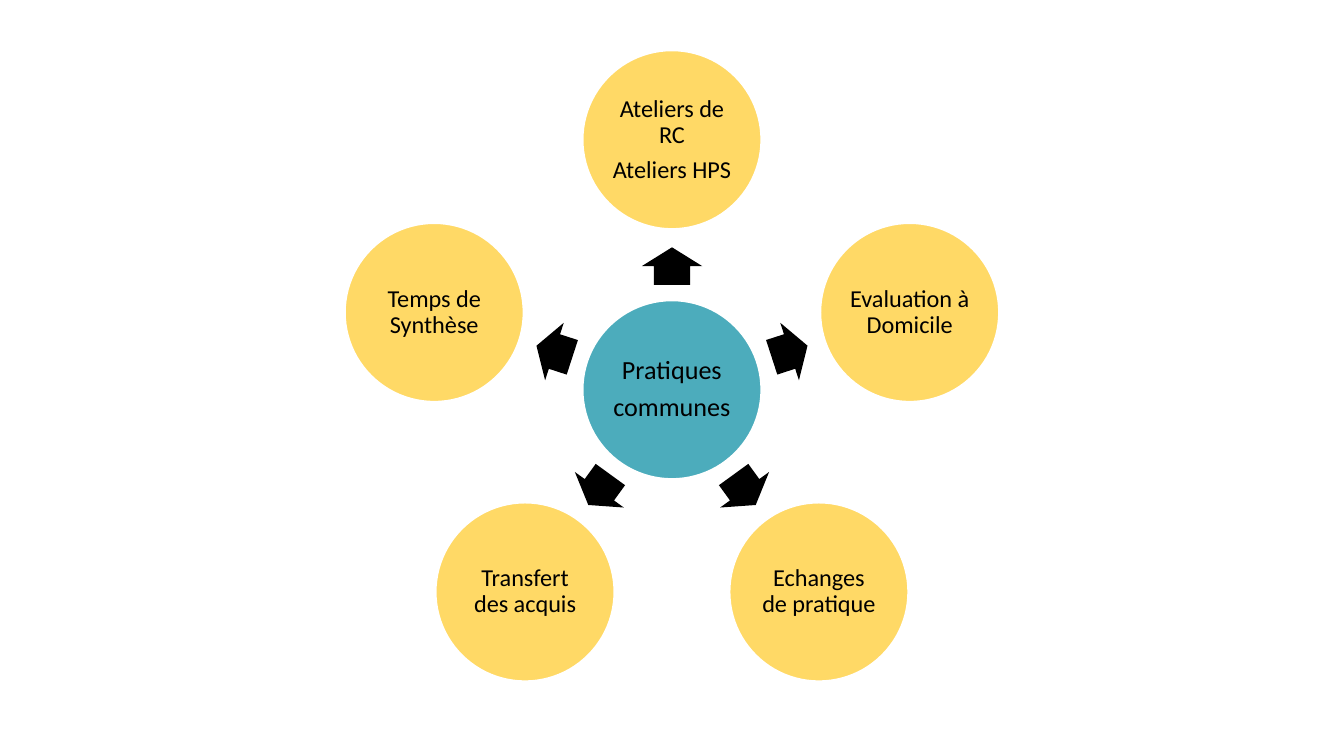
from math import cos, radians, sin

from pptx import Presentation
from pptx.dml.color import RGBColor
from pptx.enum.shapes import MSO_SHAPE
from pptx.enum.text import MSO_ANCHOR, PP_ALIGN
from pptx.util import Inches, Pt

ELLIPSE, ARROW = MSO_SHAPE.OVAL, MSO_SHAPE.RIGHT_ARROW
MIDDLE, CENTER = MSO_ANCHOR.MIDDLE, PP_ALIGN.CENTER

# Content: the hub, then the practices clockwise from the top
HUB = ["Pratiques", "communes"]
PRACTICES = [
    ["Ateliers de RC", "Ateliers HPS"],
    ["Evaluation à Domicile"],
    ["Echanges de pratique"],
    ["Transfert des acquis"],
    ["Temps de Synthèse"],
]

# Layout in inches (a 16:9 slide), colours and text sizes
SLIDE_WIDTH = 10
SLIDE_HEIGHT = SLIDE_WIDTH * 9 / 16
CENTER_X, CENTER_Y = SLIDE_WIDTH / 2, 2.9
DIAMETER = 1.33
RING_RADIUS, ARROW_RADIUS = 1.86, 0.92
ARROW_LENGTH, ARROW_WIDTH = 0.28, 0.45
TEAL, YELLOW, BLACK, WHITE = "4CACBC", "FFD966", "000000", "FFFFFF"
HUB_SIZE, PRACTICE_SIZE = 14, 13


def color(hex_value):
    return RGBColor.from_string(hex_value)


def polar(radius, angle):
    """Point at a clockwise angle around the hub."""
    return (CENTER_X + radius * cos(radians(angle)),
            CENTER_Y + radius * sin(radians(angle)))


def add_centered(slide, kind, center, width, height, fill):
    x, y = center
    shape = slide.shapes.add_shape(kind, Inches(x - width / 2), Inches(y - height / 2),
                                   Inches(width), Inches(height))
    shape.shadow.inherit = False
    shape.fill.solid()
    shape.fill.fore_color.rgb = color(fill)
    return shape


def add_circle(slide, center, lines, fill, size):
    shape = add_centered(slide, ELLIPSE, center, DIAMETER, DIAMETER, fill)
    shape.line.color.rgb = color(WHITE)
    shape.line.width = Pt(1)

    frame = shape.text_frame
    margins = {f"margin_{side}": Inches(0.02) for side in ("left", "top", "right", "bottom")}
    for name, value in {**margins, "word_wrap": True, "vertical_anchor": MIDDLE}.items():
        setattr(frame, name, value)

    paragraph_format = {"alignment": CENTER, "line_spacing": 0.9, "space_after": Pt(0.35 * size)}
    for index, line in enumerate(lines):
        paragraph = frame.add_paragraph() if index else frame.paragraphs[0]
        paragraph.text = line
        for name, value in paragraph_format.items():
            setattr(paragraph, name, value)
        for name, value in {"name": "Calibri", "size": Pt(size)}.items():
            setattr(paragraph.font, name, value)
        paragraph.font.color.rgb = color(BLACK)


def add_arrow(slide, angle):
    arrow = add_centered(slide, ARROW, polar(ARROW_RADIUS, angle),
                         ARROW_LENGTH, ARROW_WIDTH, BLACK)
    arrow.line.fill.background()
    arrow.adjustments[0], arrow.adjustments[1] = 0.6, 0.5
    arrow.rotation = angle % 360


def main():
    presentation = Presentation()
    presentation.slide_width = Inches(SLIDE_WIDTH)
    presentation.slide_height = Inches(SLIDE_HEIGHT)
    slide = presentation.slides.add_slide(presentation.slide_layouts[6])

    # Hub
    add_circle(slide, (CENTER_X, CENTER_Y), HUB, TEAL, HUB_SIZE)

    # Practices on a ring, each with an arrow pointing outwards
    for index, lines in enumerate(PRACTICES):
        angle = -90 + index * 360 / len(PRACTICES)
        add_arrow(slide, angle)
        add_circle(slide, polar(RING_RADIUS, angle), lines, YELLOW, PRACTICE_SIZE)

    presentation.save("out.pptx")


if __name__ == "__main__":
    main()
